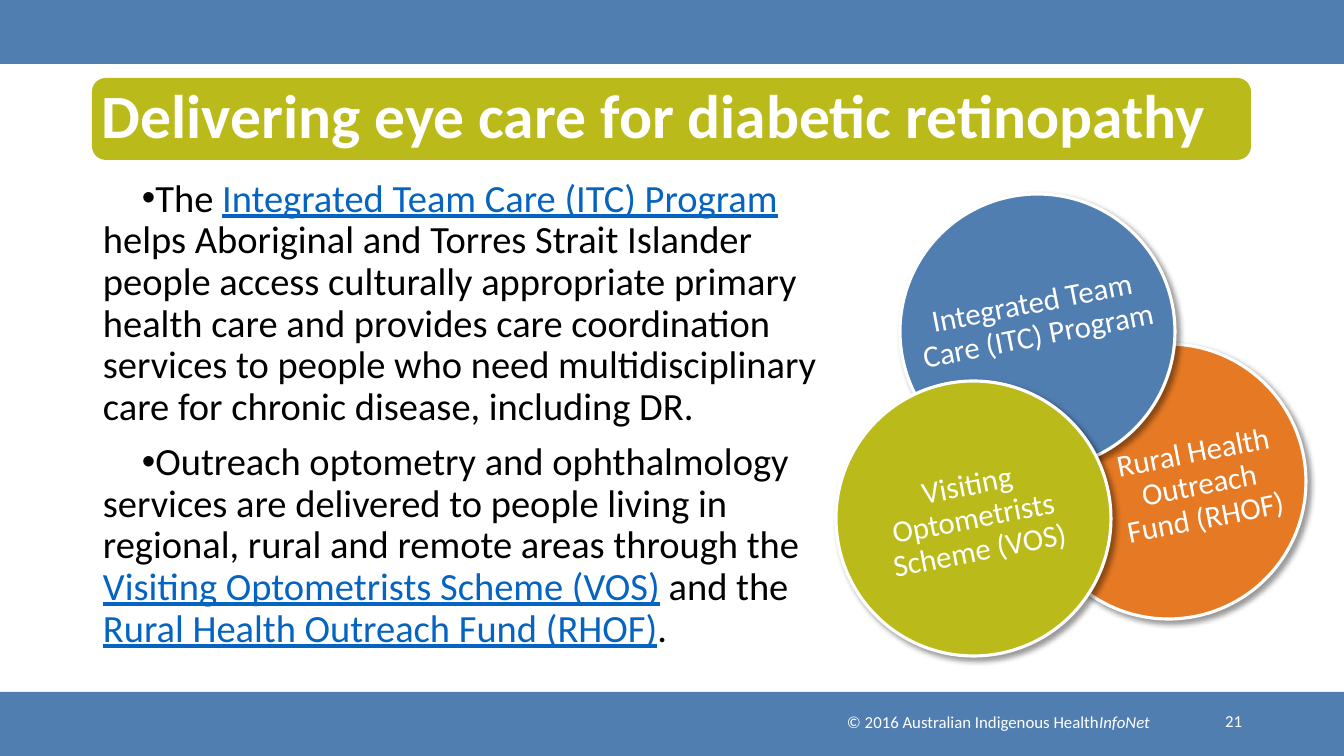
from dataclasses import dataclass
from typing import Any, NamedTuple

from lxml import etree
from pptx import Presentation
from pptx.dml.color import RGBColor
from pptx.enum.shapes import MSO_SHAPE
from pptx.enum.text import MSO_ANCHOR, PP_ALIGN
from pptx.oxml import parse_xml
from pptx.oxml.ns import nsdecls, qn
from pptx.util import Pt

EMU_PER_PX = 914400 / 100.8
RECTANGLE = MSO_SHAPE.RECTANGLE
ROUNDED = MSO_SHAPE.ROUNDED_RECTANGLE
OVAL = MSO_SHAPE.OVAL
TOP, MIDDLE = MSO_ANCHOR.TOP, MSO_ANCHOR.MIDDLE
LEFT, CENTER, RIGHT = PP_ALIGN.LEFT, PP_ALIGN.CENTER, PP_ALIGN.RIGHT

BLUE = RGBColor(0x51, 0x7E, 0xB0)
LIME = RGBColor(0xBA, 0xBA, 0x1A)
ORANGE = RGBColor(0xE6, 0x79, 0x23)
LINK = RGBColor(0x05, 0x63, 0xC1)
WHITE = RGBColor(0xFF, 0xFF, 0xFF)
BLACK = RGBColor(0x00, 0x00, 0x00)

CIRCLE_SIZE = 275
CIRCLE_ROTATION = 349
BULLET_INDENT = 39


class Box(NamedTuple):
    left: int
    top: int
    width: int
    height: int


class Insets(NamedTuple):
    left: int = 10
    top: int = 5
    right: int = 10
    bottom: int = 5


class Span(NamedTuple):
    text: str
    color: RGBColor
    format: dict[str, Any] = {}


@dataclass
class Program:
    name: str
    left: int
    top: int
    color: RGBColor
    insets: Insets


UNDERLINED = {"underline": True}
PROGRAMS = [
    Program("Rural Health\vOutreach\vFund (RHOF)", 1031, 344, ORANGE, Insets(59, 20, 0, 0)),
    Program("Integrated Team\vCare (ITC) Program", 900, 194, BLUE, Insets(0, 0, 0, 24)),
    Program("Visiting\vOptometrists\vScheme (VOS)", 836, 381, LIME, Insets(0, 0, 0, 0)),
]
BODY = [
    [
        Span("The ", BLACK),
        Span("Integrated Team Care (ITC) Program", LINK, UNDERLINED),
        Span(
            " helps Aboriginal and Torres Strait Islander people access culturally "
            "appropriate primary health care and provides care coordination services to "
            "people who need multidisciplinary care for chronic disease, including DR.",
            BLACK,
        ),
    ],
    [
        Span(
            "Outreach optometry and ophthalmology services are delivered to people "
            "living in regional, rural and remote areas through the ",
            BLACK,
        ),
        Span("Visiting Optometrists Scheme (VOS)", LINK, UNDERLINED),
        Span(" and the ", BLACK),
        Span("Rural Health Outreach Fund (RHOF)", LINK, UNDERLINED),
        Span(".", BLACK),
    ],
]


def px(length: int) -> int:
    return round(length * EMU_PER_PX)


def apply(target: Any, values: dict[str, Any]) -> None:
    for name, value in values.items():
        setattr(target, name, value)


def add_panel(slide: Any, kind: Any, box: Box, color: RGBColor) -> Any:
    panel = slide.shapes.add_shape(kind, *map(px, box))
    panel.shadow.inherit = False
    panel.fill.solid()
    panel.fill.fore_color.rgb = color
    panel.line.fill.background()
    return panel


def add_text_box(slide: Any, box: Box) -> Any:
    return slide.shapes.add_textbox(*map(px, box))


def set_frame(frame: Any, insets: Insets = Insets(), anchor: Any = MIDDLE, wrap: bool = True) -> None:
    margins = {f"margin_{side}": px(length) for side, length in insets._asdict().items()}
    apply(frame, {**margins, "vertical_anchor": anchor, "word_wrap": wrap})


def write(paragraph: Any, spans: list[Span], size: float, **layout: Any) -> None:
    apply(paragraph, layout)
    for span in spans:
        *lines, last_line = span.text.split("\v")
        for line in lines:
            write_run(paragraph, line, span, size)
            paragraph.add_line_break()
        write_run(paragraph, last_line, span, size)


def write_run(paragraph: Any, text: str, span: Span, size: float) -> None:
    run = paragraph.add_run()
    run.text = text
    apply(run.font, {"name": "Calibri", "size": Pt(size), **span.format})
    run.font.color.rgb = span.color


def add_bullet(paragraph: Any) -> None:
    properties = paragraph._p.get_or_add_pPr()
    apply_indent = {"marL": "0", "indent": str(px(BULLET_INDENT))}
    properties.attrib.update(apply_indent)
    etree.SubElement(properties, qn("a:buFont"), typeface="Arial")
    etree.SubElement(properties, qn("a:buChar"), char="•")


def add_drop_shadow(shape: Any) -> None:
    effects = shape._element.spPr.find(qn("a:effectLst"))
    effects.append(parse_xml(
        f'<a:outerShdw {nsdecls("a")} blurRad="{Pt(4)}" dist="{Pt(3)}" dir="2700000" '
        'algn="tl" rotWithShape="0"><a:srgbClr val="000000"><a:alpha val="40000"/>'
        "</a:srgbClr></a:outerShdw>"
    ))


def add_program(slide: Any, program: Program) -> None:
    box = Box(program.left, program.top, CIRCLE_SIZE, CIRCLE_SIZE)
    circle = add_panel(slide, OVAL, box, program.color)
    circle.rotation = CIRCLE_ROTATION
    circle.line.color.rgb = WHITE
    circle.line.width = Pt(2.25)
    add_drop_shadow(circle)
    set_frame(circle.text_frame, program.insets, wrap=False)
    write(circle.text_frame.paragraphs[0], [Span(program.name, WHITE)], 22,
          alignment=CENTER, line_spacing=0.9)


def add_body(slide: Any) -> None:
    frame = add_text_box(slide, Box(93, 174, 773, 506)).text_frame
    set_frame(frame, anchor=TOP)
    for index, spans in enumerate(BODY):
        paragraph = frame.add_paragraph() if index else frame.paragraphs[0]
        write(paragraph, spans, 27.5, line_spacing=0.9, space_before=Pt(10 if index else 0))
        add_bullet(paragraph)


def main() -> None:
    presentation = Presentation()
    apply(presentation, {"slide_width": px(1344), "slide_height": px(756)})
    slide = presentation.slides.add_slide(presentation.slide_layouts[6])

    for band_top in (0, 692):
        add_panel(slide, RECTANGLE, Box(0, band_top, 1344, 64), BLUE)

    title = add_panel(slide, ROUNDED, Box(92, 78, 1159, 82), LIME).text_frame
    set_frame(title, Insets(left=6, right=6))
    write(title.paragraphs[0], [Span("Delivering eye care for diabetic retinopathy", WHITE, {"bold": True})],
          44, alignment=LEFT, line_spacing=0.9)

    copyright_line = add_text_box(slide, Box(837, 707, 340, 30)).text_frame
    set_frame(copyright_line)
    write(copyright_line.paragraphs[0], [
        Span("© 2016 Australian Indigenous Health", WHITE),
        Span("InfoNet", WHITE, {"italic": True}),
    ], 12)

    slide_number = add_text_box(slide, Box(1178, 701, 74, 40)).text_frame
    set_frame(slide_number)
    write(slide_number.paragraphs[0], [Span("21", WHITE)], 12, alignment=RIGHT)

    add_body(slide)
    for program in PROGRAMS:
        add_program(slide, program)

    presentation.save("out.pptx")


if __name__ == "__main__":
    main()
